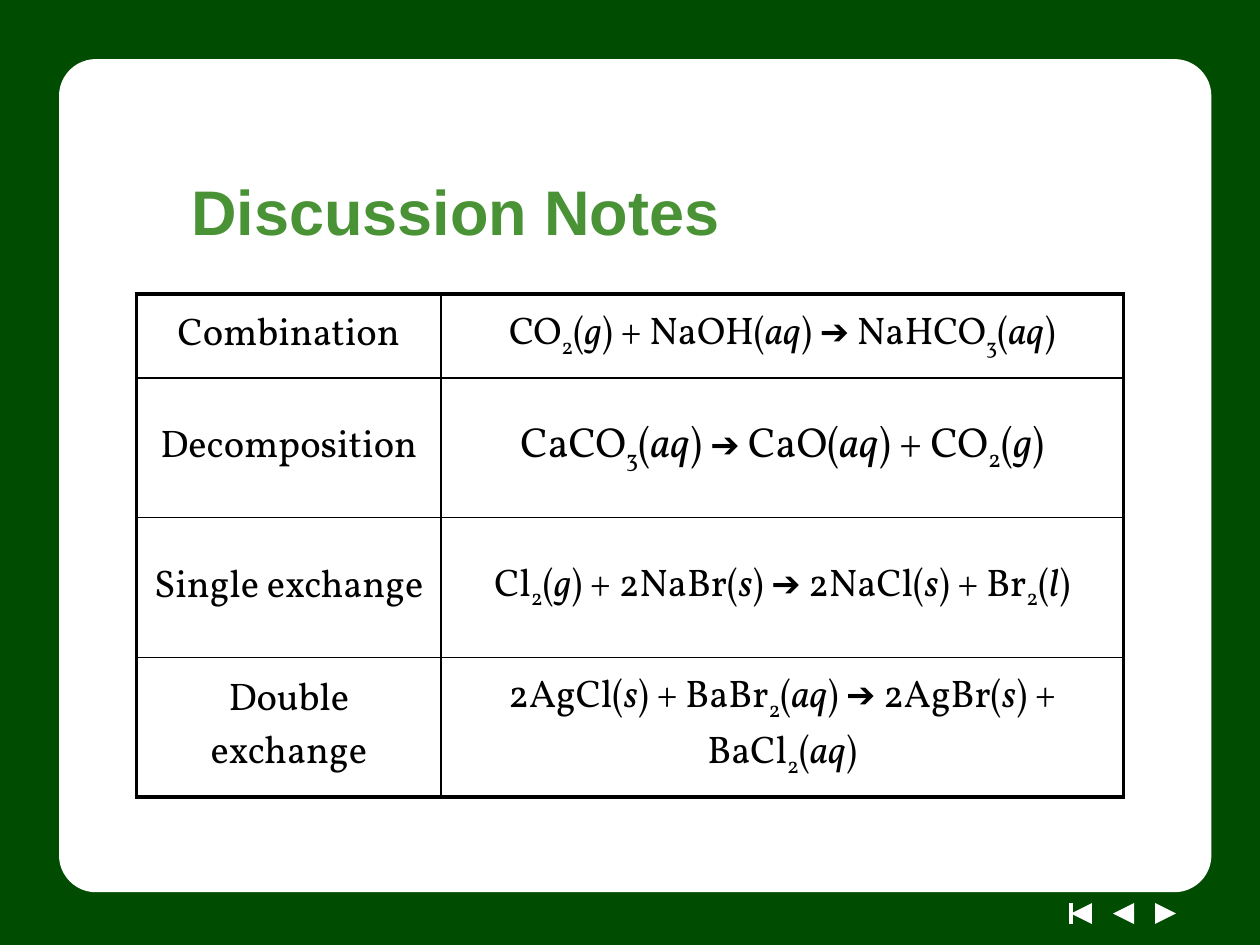
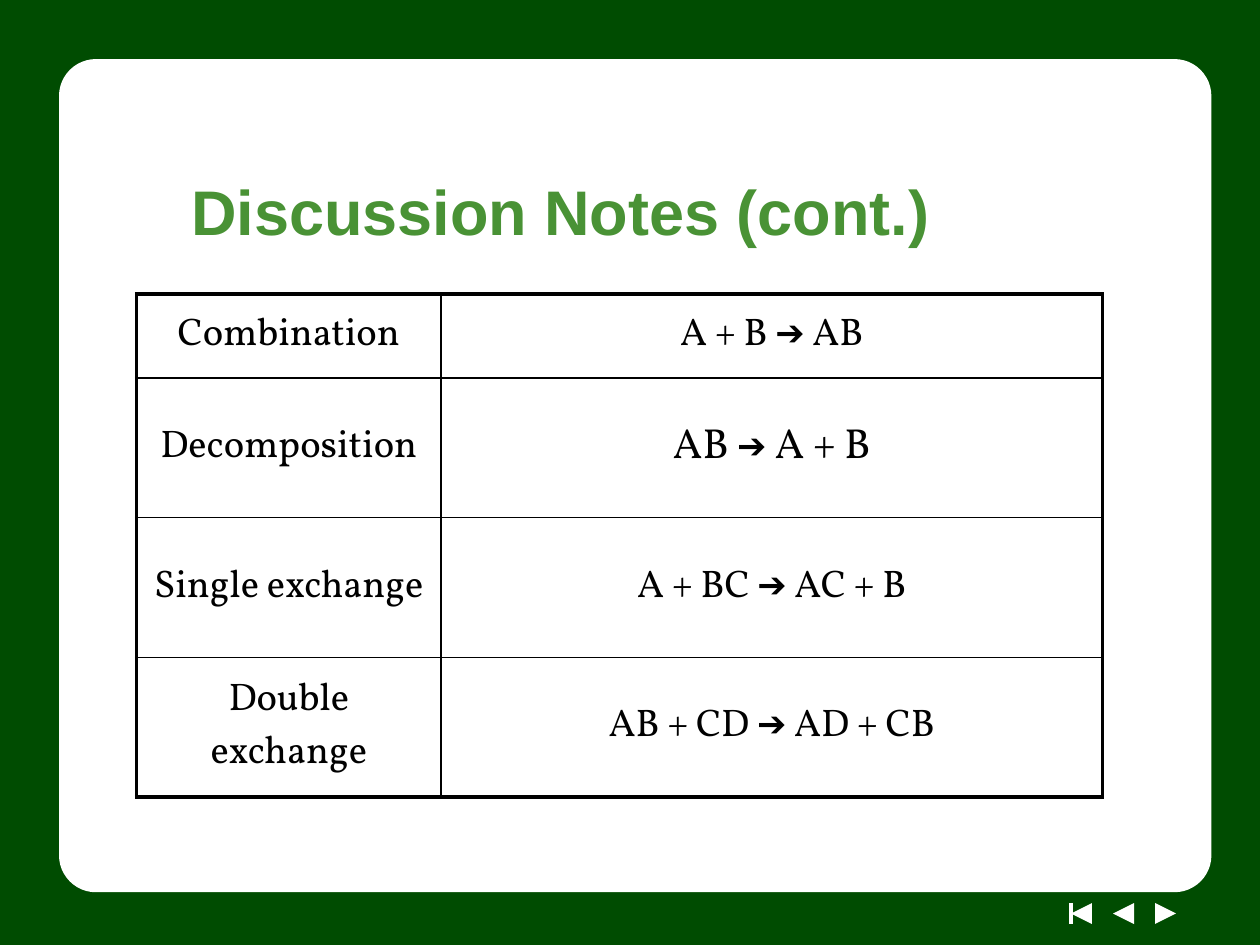
from itertools import groupby
from lxml import etree
from pptx import Presentation, util as u
from pptx.dml.color import RGBColor
from pptx.enum import shapes, text
from pptx.oxml.ns import qn

COLORS = {"frame": "004C01", "panel": "FFFFFF", "title": "499235", "ink": "000000"}
FONTS = {"title": "Arial", "table": "Vollkorn"}
SIZES = {"title": 36, "label": 22, "arrow": 20}
KINDS = ["Combination", "Decomposition", "Single exchange", "Double exchange"]
EQUATION_SIZES = [22, 24, 22, 22]
PAGES = [
    ("Discussion Notes", 650, [
        "CO_2_(*g*) + NaOH(*aq*) ➔ NaHCO_3_(*aq*)",
        "CaCO_3_(*aq*) ➔ CaO(*aq*) + CO_2_(*g*)",
        "Cl_2_(*g*) + 2NaBr(*s*) ➔ 2NaCl(*s*) + Br_2_(*l*)",
        "2AgCl(*s*) + BaBr_2_(*aq*) ➔ 2AgBr(*s*) + BaCl_2_(*aq*)",
    ]),
    ("Discussion Notes (cont.)", 630, [
        "A + B ➔ AB",
        "AB ➔ A + B",
        "A + BC ➔ AC + B",
        "AB + CD ➔ AD + CB",
    ]),
]

PX = 7620
WIDTH, HEIGHT = 1200, 900
PANEL = (60, 60, 1090, 786)
TITLE = (170, 140, 970, 120)
TABLE_LEFT, TABLE_TOP, LABEL_WIDTH = 130, 280, 290
ROW_HEIGHTS = [80, 133, 133, 133]
NAV_LEFT, NAV_TOP, NAV_STEP, NAV_SIZE = 1020, 860, 40, 20
NAV_TURNS = [270, 270, 90]
THIN, THICK = 1, 2.25


def px(*lengths):
    return [u.Emu(length * PX) for length in lengths]


def rgb(name):
    return RGBColor.from_string(COLORS[name])


def add_plain(page, kind, place, color):
    box = page.shapes.add_shape(kind, *px(*place))
    box.shadow.inherit = False
    box.fill.solid()
    box.fill.fore_color.rgb = rgb(color)
    box.line.fill.background()
    return box


def share_frame(page):
    layout = page.slide_layout
    for holder in list(layout.placeholders)[1:]:
        layout.shapes.element.remove(holder.element)
    preset = shapes.MSO_SHAPE
    parts = [add_plain(page, preset.RECTANGLE, (0, 0, WIDTH, HEIGHT), "frame")]
    for index, turn in enumerate(NAV_TURNS):
        place = (NAV_LEFT + index * NAV_STEP, NAV_TOP, NAV_SIZE, NAV_SIZE)
        arrow = add_plain(page, preset.ISOSCELES_TRIANGLE, place, "panel")
        arrow.rotation = turn
        parts.append(arrow)
    bar = page.shapes.add_connector(
        shapes.MSO_CONNECTOR.STRAIGHT,
        *px(NAV_LEFT, NAV_TOP, NAV_LEFT, NAV_TOP + NAV_SIZE))
    bar.line.color.rgb = rgb("panel")
    bar.line.width = u.Pt(2)
    etree.SubElement(bar.element.spPr, qn("a:effectLst"))
    panel = add_plain(page, preset.ROUNDED_RECTANGLE, PANEL, "panel")
    panel.adjustments[0] = 0.04
    panel.line.color.rgb = rgb("panel")
    panel.line.width = u.Pt(4.5)
    for part in parts + [bar, panel]:
        layout.shapes.element.append(part.element)


def set_title(page, words):
    title = page.shapes.title
    title.left, title.top, title.width, title.height = px(*TITLE)
    frame = title.text_frame
    frame.text = words
    frame.vertical_anchor = text.MSO_ANCHOR.MIDDLE
    frame.paragraphs[0].alignment = text.PP_ALIGN.LEFT
    font = frame.paragraphs[0].runs[0].font
    font.name, font.size, font.bold = FONTS["title"], u.Pt(SIZES["title"]), True
    font.color.rgb = rgb("title")


def split_styles(marked):
    styled, italic, lowered = [], False, False
    for letter in marked:
        if letter == "*":
            italic = not italic
        elif letter == "_":
            lowered = not lowered
        else:
            styled.append((letter, (italic, lowered, letter == "➔")))
    for style, group in groupby(styled, key=lambda item: item[1]):
        yield "".join(letter for letter, _ in group), style


def fill_cell(cell, marked, size):
    cell.vertical_anchor = text.MSO_ANCHOR.MIDDLE
    para = cell.text_frame.paragraphs[0]
    para.alignment = text.PP_ALIGN.CENTER
    para.space_before = u.Pt(size * 0.2)
    for words, (italic, lowered, is_arrow) in split_styles(marked):
        span = para.add_run()
        span.text = words
        span.font.name = FONTS["table"]
        span.font.size = u.Pt(SIZES["arrow"] if is_arrow else size)
        span.font.italic = italic
        span.font.color.rgb = rgb("ink")
        if lowered:
            span._r.get_or_add_rPr().set("baseline", "-25000")


def set_borders(cell, outer_sides):
    properties = cell._tc.get_or_add_tcPr()
    for side in "LRTB":
        width = u.Pt(THICK if side in outer_sides else THIN)
        line = etree.SubElement(properties, qn(f"a:ln{side}"), w=str(width))
        fill = etree.SubElement(line, qn("a:solidFill"))
        etree.SubElement(fill, qn("a:srgbClr"), val=COLORS["ink"])
    cell.fill.background()


def add_reactions(page, equation_width, equations):
    widths = [LABEL_WIDTH, equation_width]
    place = px(TABLE_LEFT, TABLE_TOP, sum(widths), sum(ROW_HEIGHTS))
    table = page.shapes.add_table(len(KINDS), len(widths), *place).table
    table.first_row = table.horz_banding = False
    for column, width in zip(table.columns, px(*widths)):
        column.width = width
    for row, height in zip(table.rows, px(*ROW_HEIGHTS)):
        row.height = height
    last = len(KINDS) - 1
    for index, (kind, equation, size) in enumerate(zip(KINDS, equations, EQUATION_SIZES)):
        edge = {0: "T", last: "B"}.get(index, "")
        for column, (words, points, side) in enumerate(
                [(kind, SIZES["label"], "L"), (equation, size, "R")]):
            cell = table.cell(index, column)
            fill_cell(cell, words, points)
            set_borders(cell, side + edge)


def main():
    deck = Presentation()
    deck.slide_width, deck.slide_height = px(WIDTH, HEIGHT)
    layout = deck.slide_layouts.get_by_name("Title Only")
    for number, (words, equation_width, equations) in enumerate(PAGES):
        page = deck.slides.add_slide(layout)
        if number == 0:
            share_frame(page)
        set_title(page, words)
        add_reactions(page, equation_width, equations)
    deck.save("out.pptx")


if __name__ == "__main__":
    main()
